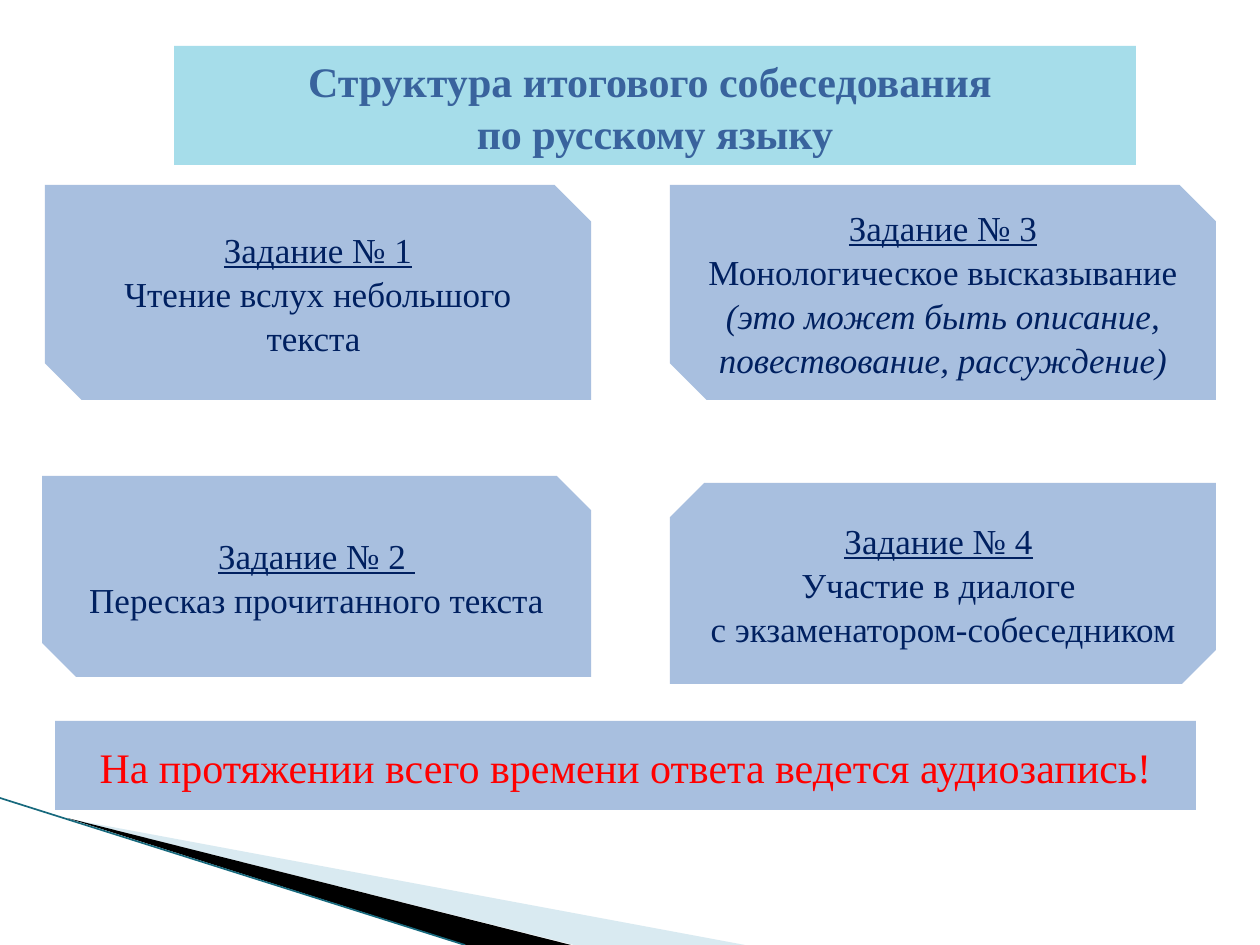
from lxml.etree import SubElement
from pptx import Presentation
from pptx.dml.color import RGBColor
from pptx.enum.shapes import MSO_CONNECTOR, MSO_SHAPE
from pptx.enum.text import MSO_ANCHOR, MSO_AUTO_SIZE, PP_ALIGN
from pptx.oxml.ns import qn
from pptx.util import Emu, Pt

PX = 914400 / 126
FONT = "Times New Roman"
BLUE, NAVY = "A8BFDF", "002060"

# Text is a list of paragraphs, each a list of (text, style); u = underline, i = italic
TITLE = [[("Структура итогового собеседования ", "")],
         [("по русскому языку", "")]]
TASKS = [  # left, top, width, height, snips (top left, top right), text
    (45, 185, 546, 215, (0, 0.17),
     [[("Задание № 1", "u")],
      [("Чтение вслух небольшого текста ", "")]]),
    (42, 476, 549, 201, (0, 0.17),
     [[("Задание № 2 ", "u")],
      [("Пересказ прочитанного текста", "")]]),
    (670, 483, 546, 201, (0.17, 0),
     [[("Задание № 4", "u"), (" ", "")],
      [("Участие в диалоге ", "")],
      [("с экзаменатором-собеседником", "")]]),
    (670, 185, 546, 215, (0, 0.17),
     [[("Задание № 3", "u")],
      [("Монологическое высказывание ", ""),
       ("(это может быть описание, повествование, рассуждение)", "i")]]),
]
NOTE = [[("На протяжении всего времени ответа ведется аудиозапись!", "")]]
WEDGES = [  # colour, opacity in percent, corners
    ("A0CBDC", 40, [(69, 819), (745, 945), (574, 945)]),
    ("000000", 100, [(67, 818), (571, 945), (466, 945)]),
]
EDGE = ("17697D", (0, 798), (465, 945))


def px(n):
    return Emu(round(n * PX))


def rgb(color):
    return RGBColor.from_string(color)


def paint(sp, color):
    sp.fill.solid()
    sp.fill.fore_color.rgb = rgb(color)
    sp.line.fill.background()


def write(sp, paragraphs, size, color, bold=False):
    tf = sp.text_frame
    tf.word_wrap = True
    tf.auto_size = MSO_AUTO_SIZE.NONE
    tf.vertical_anchor = MSO_ANCHOR.MIDDLE
    for n, runs in enumerate(paragraphs):
        p = tf.add_paragraph() if n else tf.paragraphs[0]
        p.alignment = PP_ALIGN.CENTER
        p.line_spacing = 1.05
        p.space_before = Pt(0)
        font = p.font
        font.name, font.size, font.bold = FONT, Pt(size), bold
        font.color.rgb = rgb(color)
        for text, style in runs:
            r = p.add_run()
            r.text = text
            if style == "u":
                r.font.underline = True
            elif style == "i":
                r.font.italic = True


def add_box(shapes, kind, *box):
    sp = shapes.add_shape(kind, *map(px, box))
    sp.shadow.inherit = False
    paint(sp, BLUE)
    return sp


prs = Presentation()
prs.slide_width, prs.slide_height = px(1260), px(945)
s = prs.slides.add_slide(prs.slide_layouts[5])

for color, opacity, corners in WEDGES:
    builder = s.shapes.build_freeform(*corners[0], scale=PX)
    builder.add_line_segments(corners[1:], close=True)
    wedge = builder.convert_to_shape()
    wedge.shadow.inherit = False
    paint(wedge, color)
    if opacity < 100:
        clr = wedge._element.spPr.find(qn("a:solidFill"))[0]
        SubElement(clr, qn("a:alpha"), val=str(opacity * 1000))

color, start, end = EDGE
edge = s.shapes.add_connector(MSO_CONNECTOR.STRAIGHT, *map(px, start + end))
edge.line.color.rgb = rgb(color)
edge.line.width = Pt(0.95)
SubElement(edge._element.spPr, qn("a:effectLst"))

title = s.shapes.title
title.left, title.top, title.width, title.height = map(px, (174, 46, 962, 119))
paint(title, "A6DDEA")
write(title, TITLE, 24, "39639D", bold=True)

for *box, snips, text in TASKS:
    task = add_box(s.shapes, MSO_SHAPE.SNIP_2_DIAG_RECTANGLE, *box)
    task.adjustments[0], task.adjustments[1] = snips
    write(task, text, 20, NAVY)

note = add_box(s.shapes, MSO_SHAPE.RECTANGLE, 55, 721, 1141, 89)
write(note, NOTE, 24, "FF0000")

prs.save("out.pptx")
